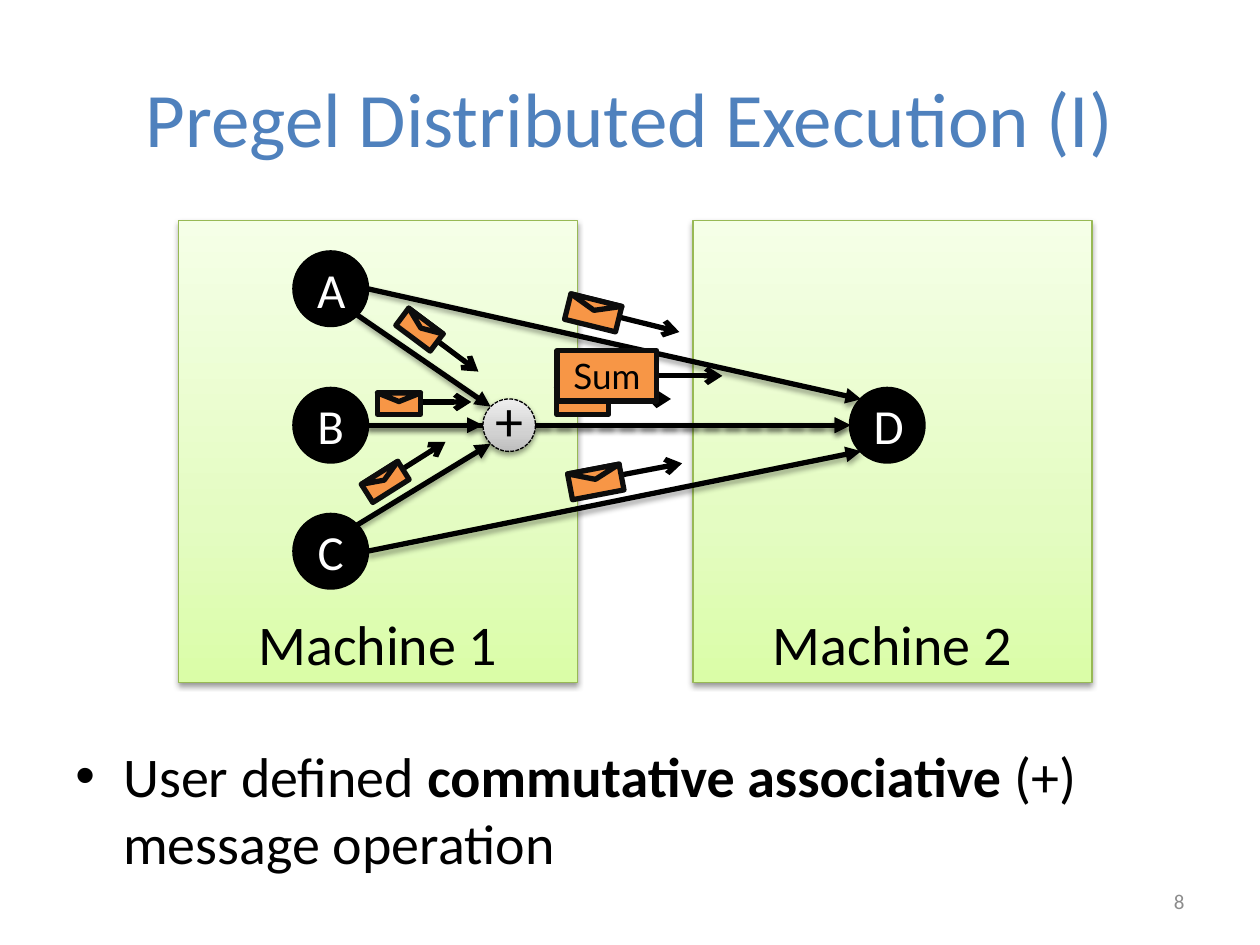
import math
from dataclasses import dataclass

import lxml.etree
import pptx
import pptx.dml.color
import pptx.enum.dml
import pptx.enum.shapes
import pptx.enum.text
import pptx.oxml.ns
import pptx.util

SHAPE = pptx.enum.shapes.MSO_SHAPE
ALIGN = pptx.enum.text.PP_ALIGN
ANCHOR = pptx.enum.text.MSO_ANCHOR
DASH = pptx.enum.dml.MSO_LINE.SQUARE_DOT
COLUMNS, ROWS = 120, 90
UNIT = pptx.util.Inches(10) / COLUMNS


@dataclass(frozen=True)
class Theme:
    font: str = "Calibri"
    sum_font: str = "Lato"
    title: str = "4F81BD"
    ink: str = "000000"
    paper: str = "FFFFFF"
    muted: str = "8C8C8C"
    envelope: str = "F79646"
    envelope_line: str = "0D0D0D"
    machine_line: str = "98B955"
    machine_fill: tuple = ((0, "DAFDA7"), (35, "E4FCC2"), (100, "F5FFE7"))
    combiner_fill: tuple = ((0, "BDBDBD"), (35, "D1D1D1"), (100, "EEEEEE"))
    title_size: int = 44
    body_size: int = 32
    node_size: int = 28
    sum_size: int = 20
    number_size: int = 12
    thick: float = 3
    thin: float = 0.75


@dataclass(frozen=True)
class Box:
    left: float
    top: float
    width: float
    height: float

    def inner(self, left, top, width, height):
        return Box(self.left + left, self.top + top, width, height)

    def around(self, center, width, height):
        return self.inner(center[0] - width / 2, center[1] - height / 2, width, height)

    def lengths(self):
        return [round(value * UNIT) for value in (self.left, self.top, self.width, self.height)]


THEME = Theme()


def color(value):
    return pptx.dml.color.RGBColor.from_string(value)


def add_element(parent, tag, **attributes):
    element = lxml.etree.SubElement(parent, pptx.oxml.ns.qn(tag))
    for name, value in attributes.items():
        element.set(name, str(value))
    return element


def set_shadow(shape, opacity, distance):
    properties = shape._element.spPr
    effects = properties.find(pptx.oxml.ns.qn("a:effectLst"))
    if effects is None:
        effects = add_element(properties, "a:effectLst")
    if opacity:
        shadow = add_element(effects, "a:outerShdw", blurRad=pptx.util.Pt(3.1),
                             dist=pptx.util.Pt(distance), dir=5400000, rotWithShape=0)
        add_element(add_element(shadow, "a:srgbClr", val=THEME.ink), "a:alpha", val=opacity * 1000)


def set_gradient(shape, stops):
    shape.fill.gradient()
    shape.fill.gradient_angle = 90
    stop_list = shape._element.spPr.find(".//" + pptx.oxml.ns.qn("a:gsLst"))
    for stop in list(stop_list):
        stop_list.remove(stop)
    for position, value in stops:
        add_element(add_element(stop_list, "a:gs", pos=position * 1000), "a:srgbClr", val=value)


def write(shape, text, size, value, align=ALIGN.CENTER, anchor=ANCHOR.MIDDLE, font=THEME.font):
    frame = shape.text_frame
    frame.text = text
    frame.word_wrap = True
    frame.vertical_anchor = anchor
    paragraph = frame.paragraphs[0]
    paragraph.alignment = align
    for run in paragraph.runs:
        run.font.name, run.font.size = font, pptx.util.Pt(size)
        run.font.color.rgb = color(value)


def add_block(slide, kind, box, fill, line, width, angle=0):
    shape = slide.shapes.add_shape(kind, *box.lengths())
    shape.shadow.inherit = False
    if isinstance(fill, tuple):
        set_gradient(shape, fill)
        set_shadow(shape, 38, 1.6)
    else:
        shape.fill.solid()
        shape.fill.fore_color.rgb = color(fill)
    shape.line.color.rgb = color(line)
    shape.line.width = pptx.util.Pt(width)
    shape.rotation = angle % 360
    return shape


def add_arrow(slide, box, start, end, head, opacity=0, dashed=False):
    ends = [round((origin + value) * UNIT) for point in (start, end)
            for origin, value in zip((box.left, box.top), point)]
    arrow = slide.shapes.add_connector(pptx.enum.shapes.MSO_CONNECTOR.STRAIGHT, *ends)
    arrow.line.color.rgb = color(THEME.ink)
    arrow.line.width = pptx.util.Pt(THEME.thick)
    if dashed:
        arrow.line.dash_style = DASH
    add_element(arrow.line._get_or_add_ln(), "a:tailEnd", type=head)
    set_shadow(arrow, opacity, 1.8)


def move(point, along, across, angle):
    cosine, sine = math.cos(math.radians(angle)), math.sin(math.radians(angle))
    return point[0] + along * cosine - across * sine, point[1] + along * sine + across * cosine


def add_envelope(slide, box, center, width, angle):
    start = move(center, 0.48 * width, -0.04 * width, angle)
    add_arrow(slide, box, start, move(start, 1.2 * width, 0, angle), "arrow")
    style = THEME.envelope, THEME.envelope_line, THEME.thick
    add_block(slide, SHAPE.RECTANGLE, box.around(center, width, width / 2), *style, angle)
    flap = move(center, 0, -0.15 * width, angle)
    add_block(slide, SHAPE.ISOSCELES_TRIANGLE, box.around(flap, width, width / 5), *style, angle + 180)


def add_sum(slide, box, center):
    add_arrow(slide, box, center, (center[0] + 11, center[1]), "arrow")
    shape = add_block(slide, SHAPE.RECTANGLE, box.around(center, 9.5, 4.8),
                      THEME.envelope, THEME.envelope_line, THEME.thick)
    write(shape, "Sum", THEME.sum_size, THEME.ink, font=THEME.sum_font)
    shape.text_frame.word_wrap = False


def add_diagram(slide, box):
    for index, name in enumerate(("Machine 1", "Machine 2")):
        machine = add_block(slide, SHAPE.RECTANGLE, box.inner(49 * index, 0, 38, box.height),
                            THEME.machine_fill, THEME.machine_line, THEME.thin)
        write(machine, name, THEME.body_size, THEME.ink, anchor=ANCHOR.BOTTOM)
    for center, angle in (((39.5, 8.8), 13.9), ((38.5, 17.2), 0), ((39.75, 24.9), -10.8)):
        add_envelope(slide, box, center, 5, angle)

    nodes = {"A": (14.5, 6.5), "B": (14.5, 19.5), "C": (14.5, 31.5), "D": (67.5, 19.5)}
    combiner, node_radius, combiner_radius = (31.5, 19.5), 3.5, 2.5
    arrivals = {"A": 225, "B": 180, "C": 135}
    for name, angle in arrivals.items():
        add_arrow(slide, box, move(nodes[name], node_radius, 0, 0),
                  move(nodes["D"], node_radius, 0, angle), "triangle", 35)
    for name, angle in arrivals.items():
        add_arrow(slide, box, move(nodes[name], node_radius, 0, angle - 180),
                  move(combiner, combiner_radius, 0, angle), "triangle", 35)
    add_arrow(slide, box, move(combiner, combiner_radius, 0, 0),
              move(nodes["D"], node_radius, 0, 180), "triangle", 35, dashed=True)

    plus = add_block(slide, SHAPE.OVAL, box.around(combiner, 5, 5),
                     THEME.combiner_fill, THEME.ink, THEME.thin)
    plus.line.dash_style = DASH
    write(plus, "+", THEME.body_size, THEME.ink)
    frame = plus.text_frame
    frame.margin_left = frame.margin_top = frame.margin_right = 0
    frame.margin_bottom = pptx.util.Inches(0.1)
    for name, center in nodes.items():
        node = add_block(slide, SHAPE.OVAL, box.around(center, 7, 7), THEME.ink, THEME.ink, 2)
        write(node, name, THEME.node_size, THEME.paper)

    add_sum(slide, box, (40.8, 14.8))
    for center, angle in (((22.95, 10.4), 36.8), ((19.7, 24.9), -32.3), ((21, 17.45), 0)):
        add_envelope(slide, box, center, 4.1, angle)


def add_title(slide, box):
    title = slide.shapes.title
    title.left, title.top, title.width, title.height = box.lengths()
    write(title, "Pregel Distributed Execution (I)", THEME.title_size, THEME.title)


def add_body(slide, box):
    body = slide.shapes.add_textbox(*box.lengths())
    write(body, "User defined ", THEME.body_size, THEME.ink, ALIGN.LEFT, ANCHOR.TOP)
    paragraph = body.text_frame.paragraphs[0]
    properties = paragraph._p.get_or_add_pPr()
    properties.set("marL", str(pptx.util.Inches(0.38)))
    properties.set("indent", str(pptx.util.Inches(-0.38)))
    add_element(properties, "a:buFont", typeface="Arial")
    add_element(properties, "a:buChar", char="•")
    for text, bold in (("commutative associative", True), (" (+) message operation", False)):
        run = paragraph.add_run()
        run.text = text
        run.font.name, run.font.size, run.font.bold = THEME.font, pptx.util.Pt(THEME.body_size), bold
        run.font.color.rgb = color(THEME.ink)


def add_number(slide, box):
    write(slide.shapes.add_textbox(*box.lengths()), "8", THEME.number_size, THEME.muted, ALIGN.RIGHT)


def main():
    presentation = pptx.Presentation()
    presentation.slide_width, presentation.slide_height = round(COLUMNS * UNIT), round(ROWS * UNIT)
    slide = presentation.slides.add_slide(presentation.slide_layouts.get_by_name("Title Only"))
    add_title(slide, Box(6, 3.6, 108, 15))
    add_diagram(slide, Box(17, 21, 87, 44))
    add_body(slide, Box(6, 70, 108, 18))
    add_number(slide, Box(86, 83.4, 28, 4.8))
    presentation.save("out.pptx")


if __name__ == "__main__":
    main()
